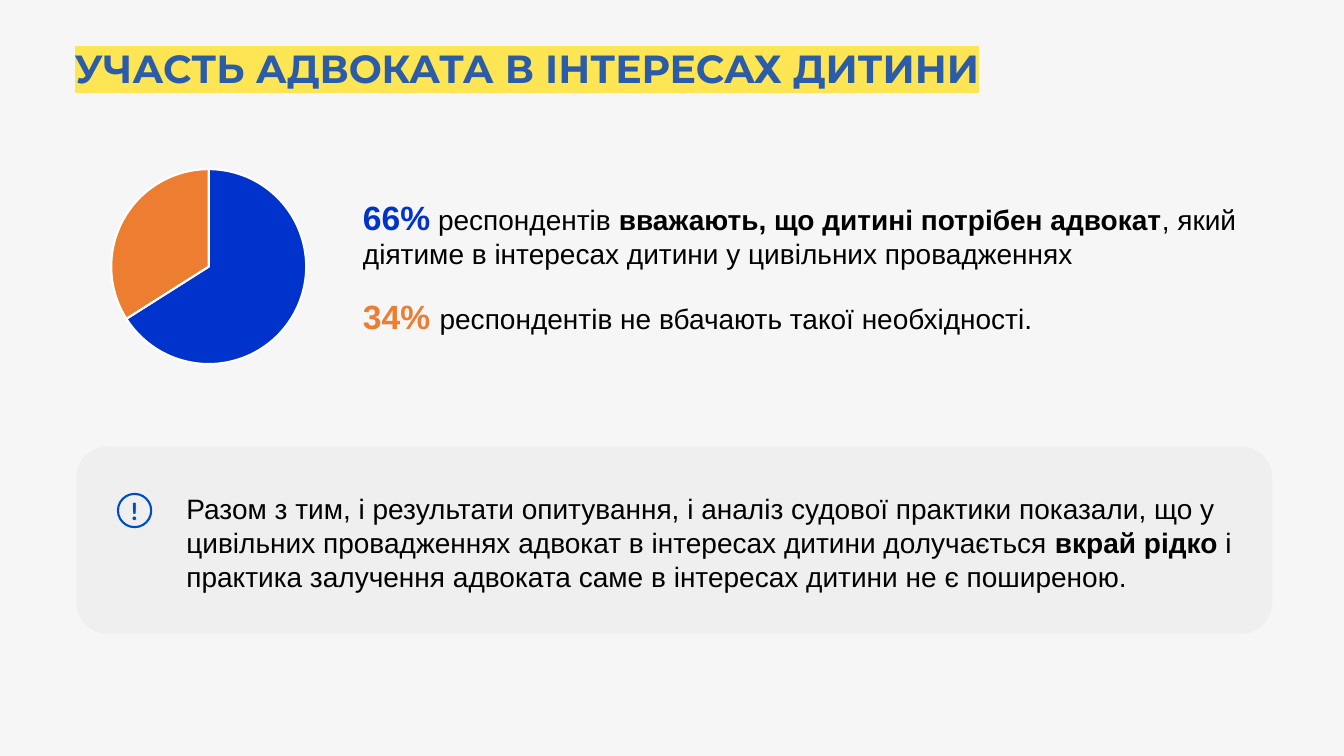
from pptx import Presentation, util as u
from pptx.chart.data import CategoryChartData
from pptx.dml.color import RGBColor
from pptx.enum import chart as charts, shapes, text
from pptx.oxml import parse_xml
from pptx.oxml.ns import nsdecls

BLUE, ORANGE, BLACK = "0033CC", "ED7D31", "000000"


def color(code):
    return RGBColor.from_string(code)


class Deck:
    font = "Arial"
    size = 20
    icon = "004BC1"

    def __init__(self):
        self.file = Presentation()
        self.file.slide_width = u.Inches(13.33)
        self.file.slide_height = u.Inches(7.5)
        self.slide = self.file.slides.add_slide(self.file.slide_layouts[1])
        fill = self.slide.background.fill
        fill.solid()
        fill.fore_color.rgb = color("F6F6F6")

    def place(self, shape, box):
        shape.left, shape.top, shape.width, shape.height = map(u.Inches, box)
        frame = shape.text_frame
        frame.word_wrap = True
        frame.auto_size = text.MSO_AUTO_SIZE.NONE
        frame.vertical_anchor = text.MSO_ANCHOR.TOP
        return frame

    def style(self, run, size=size, code=BLACK, bold=False, font=font):
        face = run.font
        face.size, face.bold, face.name = u.Pt(size), bold, font
        face.color.rgb = color(code)

    def put(self, para, parts, before=0, after=0):
        para.alignment = text.PP_ALIGN.LEFT
        para.space_before, para.space_after = u.Pt(before), u.Pt(after)
        for words, look in parts:
            run = para.add_run()
            run.text = words
            self.style(run, **look)

    def title(self, words, box, mark):
        para = self.place(self.slide.shapes.title, box).paragraphs[0]
        self.put(para, [(words, dict(size=28, code="2A5CAA", bold=True, font="Montserrat"))], 12, 12)
        fill = para.runs[0]._r.rPr.solidFill
        fill.addnext(parse_xml(f'<a:highlight {nsdecls("a")}><a:srgbClr val="{mark}"/></a:highlight>'))

    def body(self, rows, box):
        frame = self.place(self.slide.placeholders[1], box)
        for i, (parts, after) in enumerate(rows):
            para = frame.add_paragraph() if i else frame.paragraphs[0]
            self.put(para, parts, 12, after)
            props = para._p.get_or_add_pPr()
            props.set("marL", "0")
            props.set("indent", "0")
            props.append(parse_xml(f'<a:buNone {nsdecls("a")}/>'))

    def note(self, parts, box):
        frame = self.place(self.slide.shapes.add_textbox(0, 0, 0, 0), box)
        self.put(frame.paragraphs[0], parts)

    def pie(self, values, codes, box):
        data = CategoryChartData()
        data.categories = [str(i + 1) for i in range(len(values))]
        data.add_series("Series 1", values)
        chart = self.slide.shapes.add_chart(charts.XL_CHART_TYPE.PIE, *map(u.Inches, box), data).chart
        chart.has_legend = chart.has_title = False
        chart.font.size, chart.font.name = u.Pt(10), "Calibri"
        chart.font.color.rgb = color(BLACK)
        plot = chart.plots[0]
        plot.vary_by_categories = True
        for i, code in enumerate(codes):
            form = plot.series[0].points[i].format
            form.fill.solid()
            form.fill.fore_color.rgb = color(code)
            form.line.color.rgb = color("FFFFFF")
            form.line.width = u.Pt(1.5)

    def shape(self, kind, box):
        item = self.slide.shapes.add_shape(kind, *map(u.Inches, box))
        item.shadow.inherit = False
        return item

    def panel(self, box):
        item = self.shape(shapes.MSO_SHAPE.ROUNDED_RECTANGLE, box)
        item.fill.solid()
        item.fill.fore_color.rgb = color("EFEFEF")
        item.line.fill.background()

    def alert(self, box):
        item = self.shape(shapes.MSO_SHAPE.OVAL, box)
        item.fill.background()
        item.line.color.rgb = color(self.icon)
        item.line.width = u.Pt(1.5)
        frame = item.text_frame
        frame.text = "!"
        frame.word_wrap = False
        frame.vertical_anchor = text.MSO_ANCHOR.MIDDLE
        frame.margin_left = frame.margin_right = frame.margin_top = frame.margin_bottom = 0
        para = frame.paragraphs[0]
        para.alignment = text.PP_ALIGN.CENTER
        self.style(para.runs[0], 18, self.icon, True, "Calibri")


def main():
    deck = Deck()
    plain, bold = {}, dict(bold=True)
    deck.title("УЧАСТЬ АДВОКАТА В ІНТЕРЕСАХ ДИТИНИ", (0.64, 0.39, 10.75, 0.57), "FEE554")
    deck.pie((66, 34), (BLUE, ORANGE), (0.64, 1.54, 2.86, 2.21))
    deck.body([
        ([("66%", dict(size=24, code=BLUE, bold=True)),
          (" респондентів ", plain),
          ("вважають, що дитині потрібен адвокат", bold),
          (", який діятиме в інтересах дитини у цивільних провадженнях", plain)], 6),
        ([("34% ", dict(size=24, code=ORANGE, bold=True)),
          ("респондентів не вбачають такої необхідності.", plain)], 12),
    ], (3.5, 1.9, 9, 1.5))
    deck.panel((0.76, 4.43, 11.86, 1.86))
    deck.note([
        ("Разом з тим, і результати опитування, і аналіз судової практики показали, "
         "що у цивільних провадженнях адвокат в інтересах дитини долучається ", plain),
        ("вкрай рідко ", bold),
        ("і практика залучення адвоката саме в інтересах дитини не є поширеною.", plain),
    ], (1.75, 4.83, 10.75, 1.11))
    deck.alert((1.17, 4.9, 0.33, 0.33))
    deck.file.save("out.pptx")


if __name__ == "__main__":
    main()
